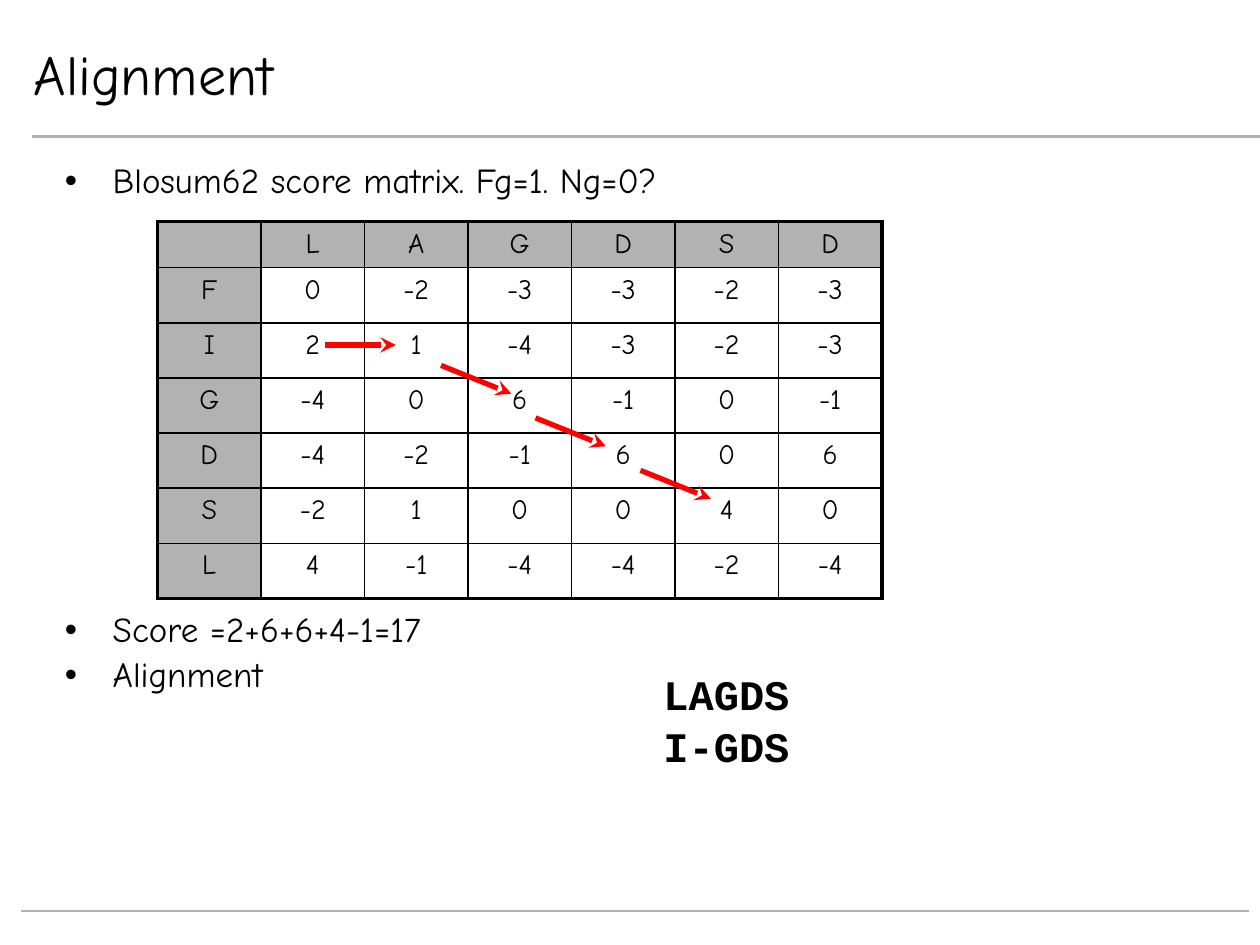
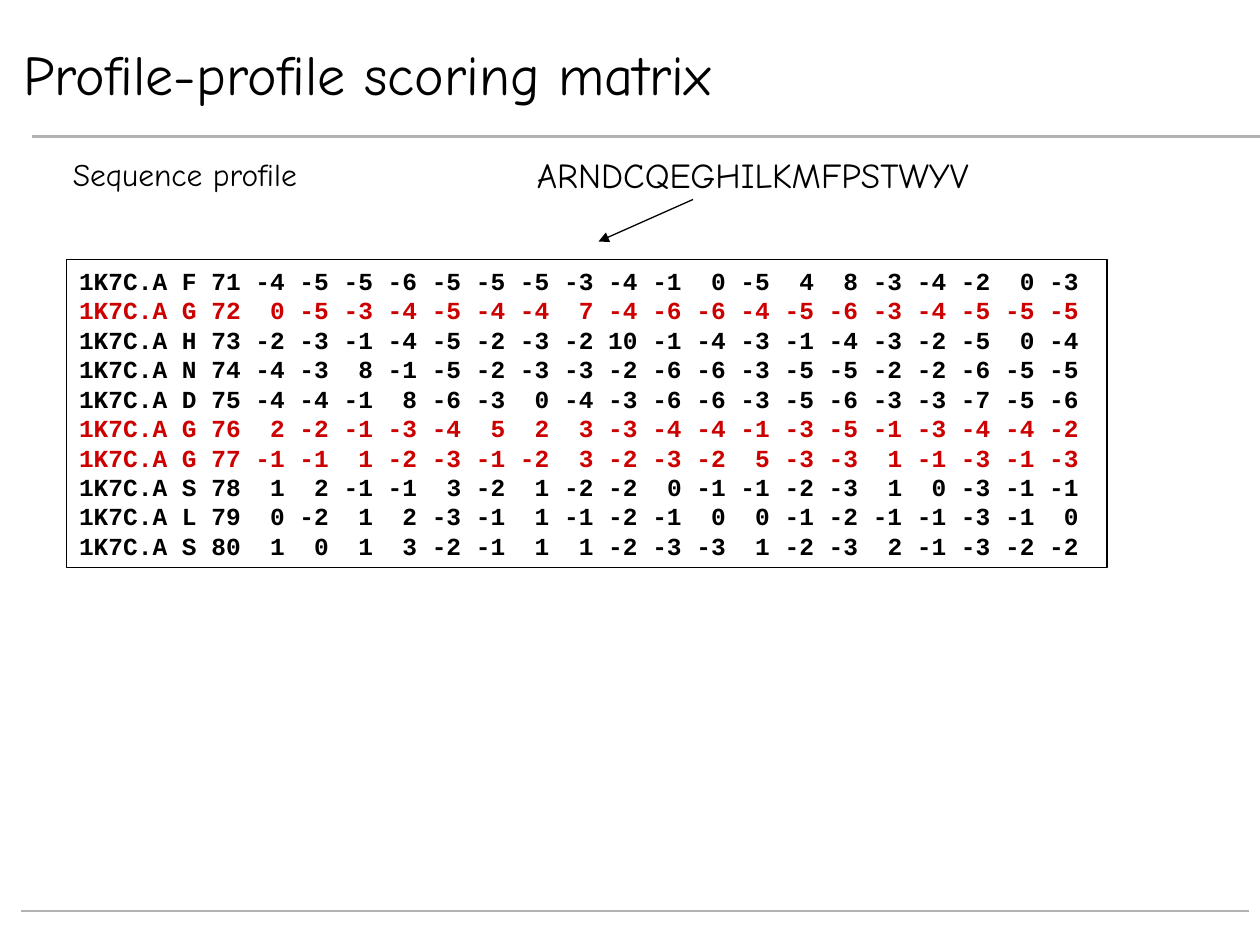
from lxml import etree
from pptx import Presentation
from pptx.dml.color import RGBColor
from pptx.enum.shapes import MSO_CONNECTOR, MSO_SHAPE
from pptx.enum.text import MSO_ANCHOR, MSO_AUTO_SIZE, PP_ALIGN
from pptx.oxml.ns import qn
from pptx.util import Inches, Pt

STRAIGHT, RECT = MSO_CONNECTOR.STRAIGHT, MSO_SHAPE.RECTANGLE
TOP, MIDDLE = MSO_ANCHOR.TOP, MSO_ANCHOR.MIDDLE
LEFT, CENTER, FIXED = PP_ALIGN.LEFT, PP_ALIGN.CENTER, MSO_AUTO_SIZE.NONE
HUES = {"ink": "000000", "gray": "B2B2B2", "white": "FFFFFF",
        "step": "FF0000", "mark": "CC0000"}
SANS, MONO = "Comic Neue", "Courier New"
COLS, ROWS = 120, 90
UNIT = Inches(10) / COLS
TITLE_ONLY = 5

SCORES = """F 0 -2 -3 -3 -2 -3
I 2 1 -4 -3 -2 -3
G -4 0 6 -1 0 -1
D -4 -2 -1 6 0 6
S -2 1 0 0 4 0
L 4 -1 -4 -4 -2 -4"""
GRID = [["", *"LAGDSD"]] + [row.split() for row in SCORES.splitlines()]

PROFILE = """F -4 -5 -5 -6 -5 -5 -5 -3 -4 -1 0 -5 4 8 -3 -4 -2 0 -3
G 0 -5 -3 -4 -5 -4 -4 7 -4 -6 -6 -4 -5 -6 -3 -4 -5 -5 -5
H -2 -3 -1 -4 -5 -2 -3 -2 10 -1 -4 -3 -1 -4 -3 -2 -5 0 -4
N -4 -3 8 -1 -5 -2 -3 -3 -2 -6 -6 -3 -5 -5 -2 -2 -6 -5 -5
D -4 -4 -1 8 -6 -3 0 -4 -3 -6 -6 -3 -5 -6 -3 -3 -7 -5 -6
G 2 -2 -1 -3 -4 5 2 3 -3 -4 -4 -1 -3 -5 -1 -3 -4 -4 -2
G -1 -1 1 -2 -3 -1 -2 3 -2 -3 -2 5 -3 -3 1 -1 -3 -1 -3
S 1 2 -1 -1 3 -2 1 -2 -2 0 -1 -1 -2 -3 1 0 -3 -1 -1
L 0 -2 1 2 -3 -1 1 -1 -2 -1 0 0 -1 -2 -1 -1 -3 -1 0
S 1 0 1 3 -2 -1 1 1 -2 -3 -3 1 -2 -3 2 -1 -3 -2 -2"""
FIRST = 71


def hue(name):
    """Turn a colour name into an RGB value."""
    return RGBColor.from_string(HUES[name])


def span(*cells):
    """Turn grid cells into slide lengths."""
    return [round(cell * UNIT) for cell in cells]


def style(para, size, face=SANS, tone="ink", bold=False):
    """Format every run of a paragraph."""
    for run in para.runs:
        font = run.font
        font.size, font.name, font.bold = Pt(size), face, bold
        font.color.rgb = hue(tone)


def edge(shape, tone, width):
    """Set the outline of a shape."""
    shape.line.color.rgb = hue(tone)
    shape.line.width = Pt(width)


def add_line(slide, ends, tone, width, head=None):
    """Draw a straight line, with an arrowhead if one is named."""
    line = slide.shapes.add_connector(STRAIGHT, *span(*ends))
    edge(line, tone, width)
    if head:
        etree.SubElement(line.line._get_or_add_ln(), qn("a:tailEnd"), type=head)
    etree.SubElement(line._element.spPr, qn("a:effectLst"))


def add_text(slide, area, lines, size, face=SANS, align=LEFT, bold=False, pitch=None):
    """Add a text box with one paragraph per line and return its frame."""
    frame = slide.shapes.add_textbox(*span(*area)).text_frame
    frame.word_wrap = True
    frame.text = "\n".join(lines)
    for para in frame.paragraphs:
        para.alignment, para.line_spacing = align, pitch
        style(para, size, face, bold=bold)
    return frame


def add_list(slide, area, lines, gaps):
    """Add a bulleted list with the given space before each line."""
    frame = add_text(slide, area, lines, 20, pitch=0.9)
    for para, gap in zip(frame.paragraphs, gaps):
        para.space_before = Pt(gap)
        props = para._p.get_or_add_pPr()
        props.set("marL", str(Inches(0.38)))
        props.set("indent", str(-Inches(0.38)))
        etree.SubElement(props, qn("a:buFont"), typeface="Arial")
        etree.SubElement(props, qn("a:buChar"), char="•")


def add_edges(cell, outer):
    """Border a cell, with a thick line on its outer sides."""
    props = cell._tc.get_or_add_tcPr()
    for side in "LRTB":
        width = Pt(2.25 if side in outer else 1)
        line = etree.SubElement(props, qn("a:ln" + side), w=str(width))
        fill = etree.SubElement(line, qn("a:solidFill"))
        etree.SubElement(fill, qn("a:srgbClr"), val=HUES["ink"])


def add_grid(slide, area, rows, top):
    """Add the score table with gray heads and a thick frame."""
    high, wide = len(rows), len(rows[0])
    table = slide.shapes.add_table(high, wide, *span(*area)).table
    table.first_row = table.horz_banding = False
    for col in table.columns:
        col.width, = span(area[2] / wide)
    for y, row in enumerate(rows):
        table.rows[y].height, = span((area[3] - top) / (high - 1) if y else top)
        for x, text in enumerate(row):
            cell = table.cell(y, x)
            sides = {"L": x == 0, "R": x == wide - 1, "T": y == 0, "B": y == high - 1}
            add_edges(cell, [side for side, on in sides.items() if on])
            cell.fill.solid()
            cell.fill.fore_color.rgb = hue("white" if x and y else "gray")
            cell.margin_bottom = 0
            cell.text = text
            para = cell.text_frame.paragraphs[0]
            para.alignment = CENTER
            style(para, 16)


def add_stops(para, count, size):
    """Set right tabs that end every third monospaced character."""
    tabs = etree.SubElement(para._p.get_or_add_pPr(), qn("a:tabLst"))
    for i in range(count):
        place = Pt(0.6 * size * (14 + 3 * i))
        etree.SubElement(tabs, qn("a:tab"), pos=str(place), algn="r")


def add_profile(slide, area, size=14):
    """Add the framed sequence profile, with G rows marked."""
    box = slide.shapes.add_shape(RECT, *span(*area))
    box.shadow.inherit = False
    box.fill.background()
    edge(box, "ink", 0.75)
    frame = box.text_frame
    frame.vertical_anchor = TOP
    rows = [row.split() for row in PROFILE.splitlines()]
    frame.text = "\n".join(
        "\t".join([f"1K7C.A {base} {spot}", *vals])
        for spot, (base, *vals) in enumerate(rows, FIRST))
    for para, (base, *vals) in zip(frame.paragraphs, rows):
        para.alignment, para.line_spacing = LEFT, Pt(1.2 * size)
        add_stops(para, len(vals), size)
        style(para, size, MONO, "mark" if base == "G" else "ink", True)


def start(deck, text, left, width):
    """Add a slide with its two rules and its title."""
    slide = deck.slides.add_slide(deck.slide_layouts[TITLE_ONLY])
    add_line(slide, (3, 13, COLS, 13), "gray", 1.5)
    add_line(slide, (2, 86.75, COLS - 1, 86.75), "gray", 1.5)
    title = slide.shapes.title
    title.left, title.top, title.width, title.height = span(left, 4, width, 6)
    title.fill.solid()
    title.fill.fore_color.rgb = hue("white")
    edge(title, "white", 0.75)
    frame = title.text_frame
    frame.text = text
    frame.auto_size, frame.vertical_anchor = FIXED, MIDDLE
    frame.paragraphs[0].alignment = LEFT
    style(frame.paragraphs[0], 32)
    return slide


def show_scores(deck):
    """Build the alignment slide."""
    slide = start(deck, "Alignment", 2, 97)
    add_list(slide, (5, 15, 113, 52), [
        "Blosum62 score matrix. Fg=1. Ng=0?",
        "Score =2+6+6+4-1=17", "Alignment"], (0, 235, 4))
    add_grid(slide, (15, 21.1, 69, 35.9), GRID, 4.4)
    for x, y, drop in ((31, 32.85, 0), (42, 34.8, 2.7), (51, 39.8, 2.7), (61, 44.8, 2.7)):
        add_line(slide, (x, y, x + 6.7, y + drop), "step", 3, "stealth")
    add_text(slide, (62, 63, 16, 10.8), ["LAGDS", "I-GDS"], 24, MONO,
             bold=True, pitch=Pt(29.5))


def show_profile(deck):
    """Build the profile scoring slide."""
    slide = start(deck, "Profile-profile scoring matrix", 1, 94)
    add_profile(slide, (6.35, 24.75, 99.1, 29.3))
    add_text(slide, (5.75, 14.2, 26, 4.8), ["Sequence profile"], 18)
    add_text(slide, (43.3, 14, 56.8, 5.2), ["ARNDCQEGHILKMFPSTWYV"], 20, align=CENTER)
    add_line(slide, (66, 19, 57, 23), "ink", 0.75, "triangle")


def main():
    """Build the deck and save it."""
    deck = Presentation()
    deck.slide_width, deck.slide_height = span(COLS, ROWS)
    show_scores(deck)
    show_profile(deck)
    deck.save("out.pptx")


if __name__ == "__main__":
    main()
